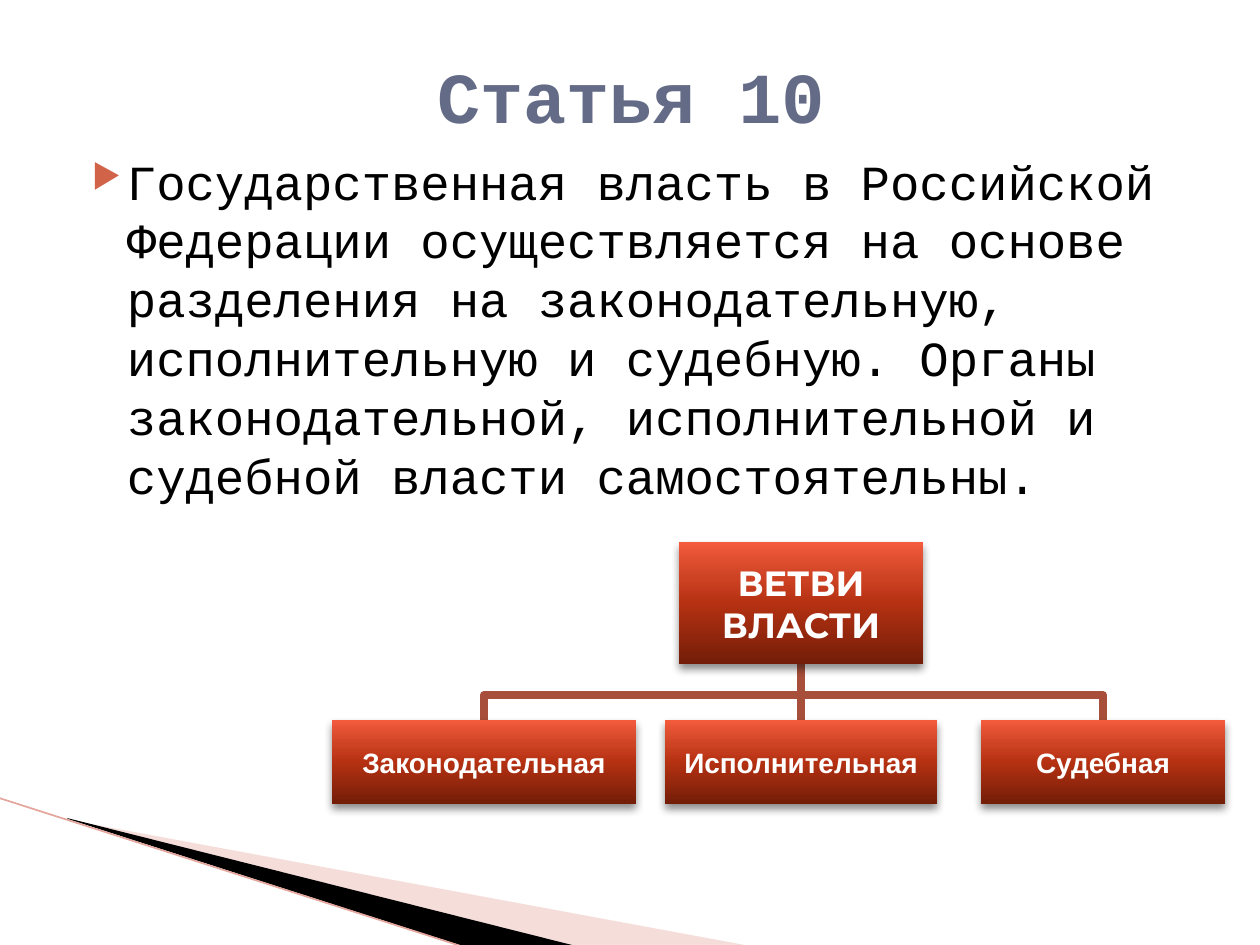
from lxml import etree
from pptx import Presentation
from pptx.dml.color import RGBColor as Color
from pptx.enum.shapes import MSO_CONNECTOR as Connector, MSO_SHAPE as Shape
from pptx.enum.text import MSO_ANCHOR as Anchor, PP_ALIGN as Align
from pptx.oxml import parse_xml
from pptx.oxml.ns import nsdecls, qn
from pptx.util import Pt

PX = 914400 / 126
THEME = {
    "title": ("Courier New", 41, True, "646B86"),
    "body": ("Courier New", 28, False, "000000"),
    "root": ("Montserrat", 20, True, "FFFFFF"),
    "branch": ("Arial", 16, True, "FFFFFF"),
    "bullet": "D16349",
    "link": "A74F3A",
    "edge": "E3A59C",
    "pale": "E7ACA4",
    "dark": "000000",
    "gradient": [(0, "731D08"), (50, "B53112"), (70, "CC4223"), (100, "F45B3D")],
}


def px(*lengths):
    return [round(length * PX) for length in lengths]


def write(box, text, style, align, anchor, inset_x, inset_y):
    frame = box.text_frame
    frame.word_wrap = True
    frame.vertical_anchor = anchor
    frame.margin_left = frame.margin_right = px(inset_x)[0]
    frame.margin_top = frame.margin_bottom = px(inset_y)[0]
    para = frame.paragraphs[0]
    para.alignment = align
    span = para.add_run()
    span.text = text
    name, size, bold, color = THEME[style]
    span.font.name = name
    span.font.size = Pt(size)
    span.font.bold = bold
    span.font.color.rgb = Color.from_string(color)
    return para


deck = Presentation()
deck.slide_width, deck.slide_height = px(1260, 945)
page = deck.slides.add_slide(deck.slide_layouts[6])
shapes = page.shapes

wedges = [
    ("pale", [(69, 820), (750, 946), (575, 946), (69, 819)]),
    ("dark", [(67, 818), (576, 946), (469, 948), (68, 819)]),
]
for color, points in wedges:
    builder = shapes.build_freeform(*points[0], scale=PX)
    builder.add_line_segments(points[1:], close=True)
    wedge = builder.convert_to_shape()
    wedge.shadow.inherit = False
    wedge.fill.solid()
    wedge.fill.fore_color.rgb = Color.from_string(THEME[color])
    wedge.line.fill.background()
    if color == "pale":
        tint = wedge.fill._xPr.find(".//" + qn("a:srgbClr"))
        etree.SubElement(tint, qn("a:alpha"), val="40000")

edge = shapes.add_connector(Connector.STRAIGHT, *px(-1, 798, 467, 948))
edge.line.color.rgb = Color.from_string(THEME["edge"])
edge.line.width = Pt(0.95)
etree.SubElement(edge._element.spPr, qn("a:effectLst"))

title = shapes.add_textbox(*px(64, 16, 1134, 158))
write(title, "Статья 10", "title", Align.CENTER, Anchor.MIDDLE, 13, 6)

body = shapes.add_textbox(*px(64, 145, 1134, 624))
para = write(
    body,
    "Государственная власть в Российской Федерации осуществляется на основе "
    "разделения на законодательную, исполнительную и судебную. Органы "
    "законодательной, исполнительной и судебной власти самостоятельны.",
    "body", Align.LEFT, Anchor.TOP, 13, 6,
)
props = para._p.get_or_add_pPr()
indent, hanging = px(50, -35)
props.set("marL", str(indent))
props.set("indent", str(hanging))
for bullet in (
    f'<a:buClr {nsdecls("a")}><a:srgbClr val="{THEME["bullet"]}"/></a:buClr>',
    f'<a:buSzPct {nsdecls("a")} val="68000"/>',
    f'<a:buChar {nsdecls("a")} char="▶"/>',
):
    props.append(parse_xml(bullet))

root_bottom, bus, row_top, middle = 664, 695, 720, 801
links = []
for center in (1103, 484):
    builder = shapes.build_freeform(middle, root_bottom, scale=PX)
    builder.add_line_segments([(middle, bus), (center, bus), (center, row_top)], close=False)
    link = builder.convert_to_shape()
    link.shadow.inherit = False
    link.fill.background()
    links.append(link)
trunk = shapes.add_connector(Connector.STRAIGHT, *px(middle, root_bottom, middle, row_top))
etree.SubElement(trunk._element.spPr, qn("a:effectLst"))
for link in links + [trunk]:
    link.line.color.rgb = Color.from_string(THEME["link"])
    link.line.width = Pt(4.33)

branches = [
    ("ВЕТВИ ВЛАСТИ", "root", middle, 542, 244, 122),
    ("Законодательная", "branch", 484, row_top, 304, 84),
    ("Исполнительная", "branch", middle, row_top, 272, 84),
    ("Судебная", "branch", 1103, row_top, 244, 84),
]
boxes = []
for text, style, center, top, width, height in branches:
    box = shapes.add_shape(Shape.RECTANGLE, *px(center - width / 2, top, width, height))
    box.line.fill.background()
    box.fill.gradient()
    box.fill.gradient_angle = 90
    stops = box._element.spPr.find(".//" + qn("a:gsLst"))
    stops.clear()
    for position, color in THEME["gradient"]:
        stop = etree.SubElement(stops, qn("a:gs"), pos=str(position * 1000))
        etree.SubElement(stop, qn("a:srgbClr"), val=color)
    box.shadow.inherit = False
    box._element.spPr.find(qn("a:effectLst")).append(parse_xml(
        f'<a:outerShdw {nsdecls("a")} blurRad="{Pt(5)}" dist="{Pt(3)}" dir="5400000" '
        'rotWithShape="0"><a:srgbClr val="000000"><a:alpha val="45000"/></a:srgbClr></a:outerShdw>'
    ))
    write(box, text, style, Align.CENTER, Anchor.MIDDLE, 1, 1)
    boxes.append(box)
trunk.begin_connect(boxes[0], 2)
trunk.end_connect(boxes[2], 0)

deck.save("out.pptx")
